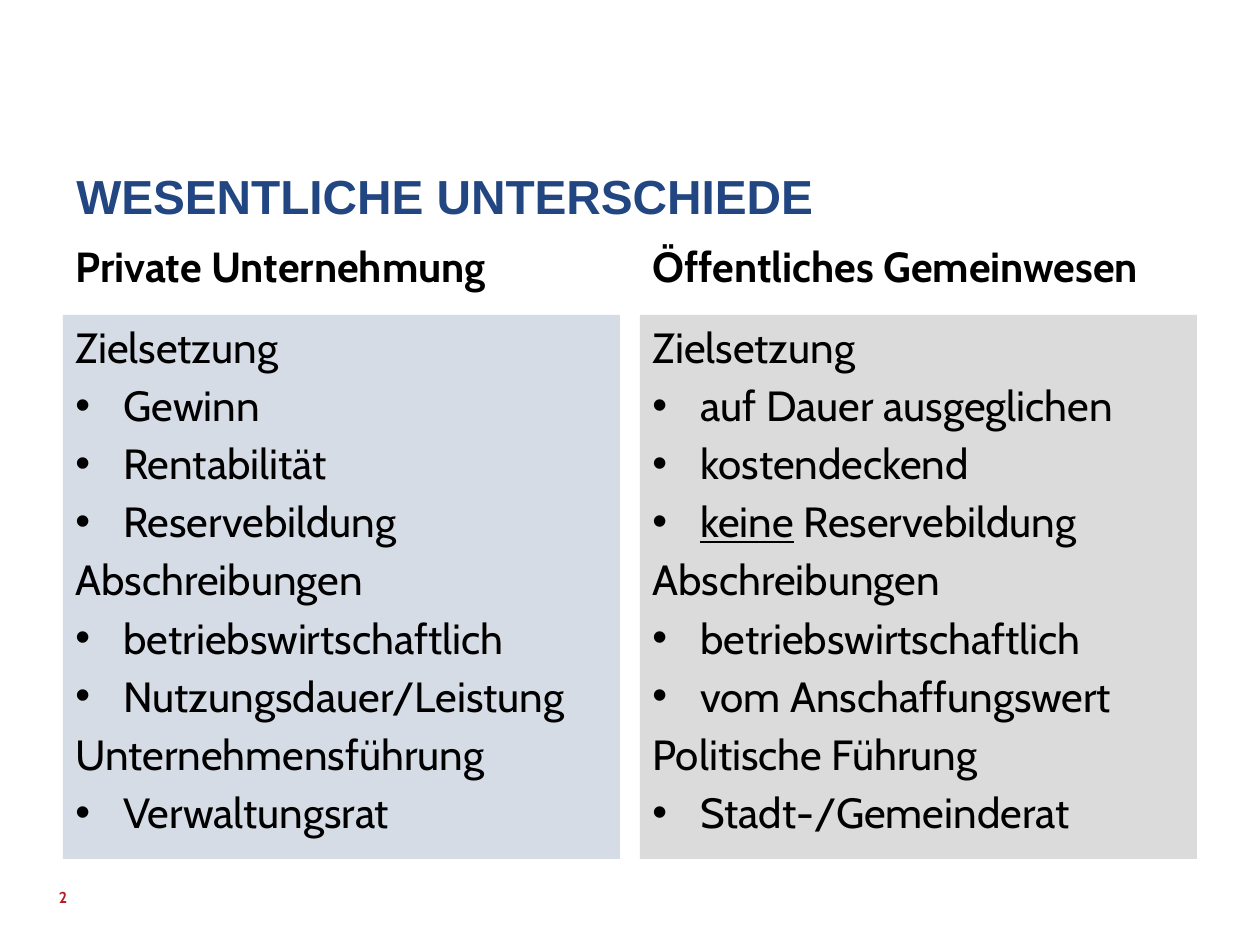
"""Build a slide comparing private companies with public bodies."""
from pptx import Presentation, util as u
from pptx.dml.color import RGBColor
from pptx.enum import shapes, text
from pptx.oxml import parse_xml
from pptx.oxml.ns import nsdecls

PX = 914400 / 126
TITLE = "WESENTLICHE UNTERSCHIEDE"
PAGE = "2"
COLUMNS = [
    ("Private Unternehmung", "D6DCE5", [
        ("Zielsetzung", ["Gewinn", "Rentabilität", "Reservebildung"]),
        ("Abschreibungen", ["betriebswirtschaftlich", "Nutzungsdauer/Leistung"]),
        ("Unternehmensführung", ["Verwaltungsrat"]),
    ]),
    ("Öffentliches Gemeinwesen", "DBDBDB", [
        ("Zielsetzung", ["auf Dauer ausgeglichen", "kostendeckend",
                         ("keine", " Reservebildung")]),
        ("Abschreibungen", ["betriebswirtschaftlich", "vom Anschaffungswert"]),
        ("Politische Führung", ["Stadt-/Gemeinderat"]),
    ]),
]
LEFT, STEP, WIDTH = 63, 577, 557
HEAD_TOP, HEAD_HEIGHT = 234, 88
BODY_TOP, BODY_HEIGHT = 315, 544
INDENT = 48


def emu(px):
    return u.Emu(round(px * PX))


def color(value):
    return RGBColor.from_string(value)


def write(p, content, size=24, font="Cabin", fill="000000", bold=False):
    """Write a string, or an underlined start followed by plain text."""
    parts = (content,) if isinstance(content, str) else content
    for i, part in enumerate(parts):
        r = p.add_run()
        r.text = part
        r.font.size, r.font.name, r.font.bold = u.Pt(size), font, bold
        r.font.color.rgb = color(fill)
        if len(parts) > 1:
            r.font.underline = i == 0


def add_label(slide, content, box, anchor="TOP", inset=None, **fmt):
    tf = slide.shapes.add_textbox(*map(emu, box)).text_frame
    tf.word_wrap = True
    tf.vertical_anchor = text.MSO_ANCHOR[anchor]
    if inset is not None:
        tf.margin_left = tf.margin_right = tf.margin_top = tf.margin_bottom = emu(inset)
    write(tf.paragraphs[0], content, **fmt)


def add_panel(slide, x, fill, groups):
    sp = slide.shapes.add_shape(shapes.MSO_SHAPE.RECTANGLE,
                                *map(emu, (x, BODY_TOP, WIDTH, BODY_HEIGHT)))
    sp.shadow.inherit = False
    sp.fill.solid()
    sp.fill.fore_color.rgb = color(fill)
    sp.line.fill.background()
    tf = sp.text_frame
    tf.word_wrap = True
    tf.vertical_anchor = text.MSO_ANCHOR.TOP
    lines = [line for topic, points in groups
             for line in [(topic, False)] + [(point, True) for point in points]]
    for i, (content, bullet) in enumerate(lines):
        p = tf.add_paragraph() if i else tf.paragraphs[0]
        p.alignment = text.PP_ALIGN.LEFT
        if i:
            p.space_before = u.Pt(4.3)
        pPr = p._p.get_or_add_pPr()
        pPr.set("marL", str(emu(INDENT)))
        pPr.set("indent", str(-emu(INDENT)))
        if bullet:
            pPr.append(parse_xml(f'<a:buFont {nsdecls("a")} typeface="Arial"/>'))
            pPr.append(parse_xml(f'<a:buChar {nsdecls("a")} char="•"/>'))
        write(p, content, size=24.1)


def main():
    prs = Presentation()
    prs.slide_width, prs.slide_height = emu(1260), emu(945)
    slide = prs.slides.add_slide(prs.slide_layouts[6])
    add_label(slide, PAGE, (59, 872, 284, 50), "MIDDLE", 0,
              size=9, fill="B21D24", bold=True)
    add_label(slide, TITLE, (64, 145, 1134, 100), "MIDDLE",
              size=27.3, font="Arial", fill="224681", bold=True)
    for i, (head, fill, groups) in enumerate(COLUMNS):
        x = LEFT + i * STEP
        add_label(slide, head, (x, HEAD_TOP, WIDTH, HEAD_HEIGHT), bold=True)
        add_panel(slide, x, fill, groups)
    prs.save("out.pptx")


if __name__ == "__main__":
    main()
